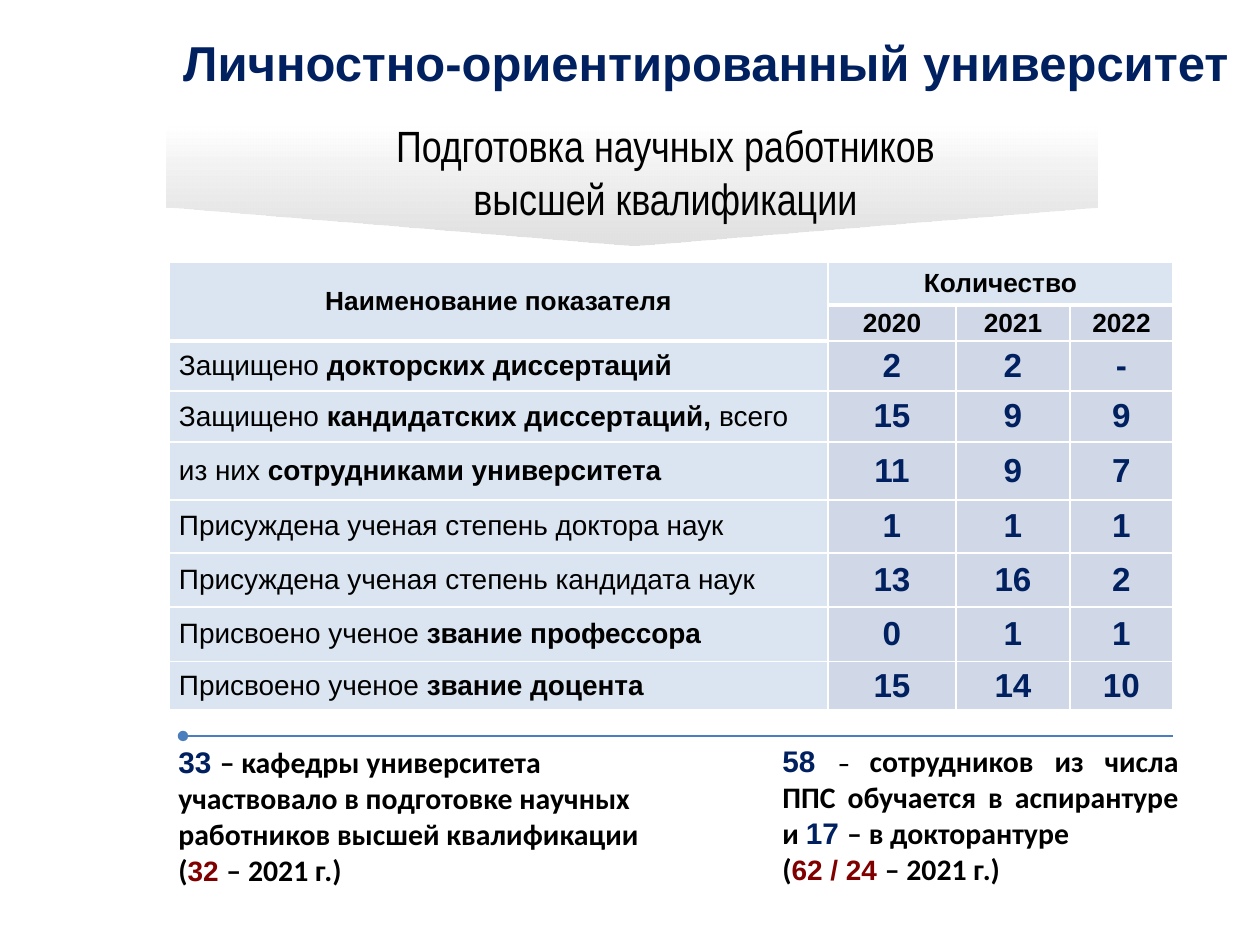
from lxml.etree import SubElement
from pptx import Presentation
from pptx.dml.color import RGBColor
from pptx.enum.shapes import MSO_CONNECTOR, MSO_SHAPE
from pptx.enum.text import MSO_ANCHOR, MSO_AUTO_SIZE, PP_ALIGN
from pptx.oxml.ns import qn
from pptx.util import Emu, Pt

PX = 914400 // 126
NAVY, BLACK, MAROON = "002060", "000000", "800000"
WHITE, ACCENT, VALUE_FILL = "FFFFFF", "4F81BD", "D0D8E8"


def px(n):
    return Emu(n * PX)


def rgb(value):
    return RGBColor.from_string(value)


def add_alpha(fill_element, percent):
    color = next(fill_element.iter(qn("a:srgbClr")))
    SubElement(color, qn("a:alpha"), val=str(percent * 1000))


def run(text, size, color=BLACK, bold=True, font="Arial"):
    return text, size, color, bold, font


class SlideBuilder:
    def __init__(self, s):
        self.s = s

    def add_runs(self, tf, paragraphs, align=PP_ALIGN.LEFT, level=0, after=0):
        for i, runs in enumerate(paragraphs):
            p = tf.paragraphs[0] if i == 0 else tf.add_paragraph()
            p.alignment = align
            p.space_after = Pt(after)
            if level:
                p.level = level
                pPr = p._p.get_or_add_pPr()
                pPr.set("marL", str(457200 * level))
                pPr.set("indent", "0")
            for text, size, color, bold, font in runs:
                r = p.add_run()
                r.text = text
                r.font.size = Pt(size)
                r.font.bold = bold
                r.font.name = font
                r.font.color.rgb = rgb(color)

    def text(self, box, paragraphs, anchor=MSO_ANCHOR.TOP, grow=True, **style):
        tf = self.s.shapes.add_textbox(*map(px, box)).text_frame
        tf.word_wrap = True
        tf.vertical_anchor = anchor
        if grow:
            tf.auto_size = MSO_AUTO_SIZE.SHAPE_TO_FIT_TEXT
        self.add_runs(tf, paragraphs, **style)

    def banner(self, box):
        sp = self.s.shapes.add_shape(MSO_SHAPE.PENTAGON, *map(px, box))
        sp.rotation = 90
        sp.adjustments[0] = 0.319
        sp.shadow.inherit = False
        sp.line.fill.background()
        sp.fill.gradient()
        sp.fill.gradient_angle = 0
        stops = sp.fill.gradient_stops
        for stop, color, position in zip(stops, (WHITE, "D9D9D9"), (0, 1)):
            stop.color.rgb = rgb(color)
            stop.position = position
        add_alpha(list(sp._element.spPr.iter(qn("a:gs")))[1], 78)

    def line(self, x1, x2, y):
        cn = self.s.shapes.add_connector(
            MSO_CONNECTOR.STRAIGHT, px(x1), px(y), px(x2), px(y))
        cn.line.color.rgb = rgb("4B7EBC")
        cn.line.width = Pt(1.25)
        spPr = cn._element.spPr
        SubElement(spPr.find(qn("a:ln")), qn("a:headEnd"), type="oval")
        SubElement(spPr, qn("a:effectLst"))

    def table(self, left, top, cols, rows):
        frame = self.s.shapes.add_table(
            len(rows), len(cols), px(left), px(top), px(sum(cols)), px(sum(rows)))
        table = frame.table
        for column, width in zip(table.columns, cols):
            column.width = px(width)
        for row, height in zip(table.rows, rows):
            row.height = px(height)
        return table

    def border(self, cell, widths):
        tcPr = cell._tc.get_or_add_tcPr()
        for side, width in zip("LRTB", widths):
            ln = SubElement(tcPr, qn(f"a:ln{side}"), w=str(int(Pt(width))))
            SubElement(SubElement(ln, qn("a:solidFill")), qn("a:srgbClr"), val=WHITE)

    def style_cell(self, cell, fill, alpha, widths):
        self.border(cell, widths)
        cell.fill.solid()
        cell.fill.fore_color.rgb = rgb(fill)
        if alpha:
            add_alpha(cell._tc.tcPr.find(qn("a:solidFill")), alpha)
        cell.vertical_anchor = MSO_ANCHOR.MIDDLE
        cell.margin_left = cell.margin_right = px(10)
        cell.margin_top = cell.margin_bottom = 0


def label(*parts):
    """Plain and bold parts of an indicator name, in turn."""
    return [run(t, 16, bold=i % 2 == 1) for i, t in enumerate(parts)]


INDICATORS = [
    (label("Защищено ", "докторских диссертаций"), "2", "2", "-"),
    (label("Защищено ", "кандидатских диссертаций, ", "всего"), "15", "9", "9"),
    (label("из них ", "сотрудниками университета"), "11", "9", "7"),
    (label("Присуждена ученая степень доктора наук"), "1", "1", "1"),
    (label("Присуждена ученая степень кандидата наук"), "13", "16", "2"),
    (label("Присвоено ученое ", "звание профессора"), "0", "1", "1"),
    (label("Присвоено ученое ", "звание доцента"), "15", "14", "10"),
]


def has_thick_bottom(row, col):
    return row == 0 or (row, col) == (1, 0)


def add_indicator_table(b):
    rows = [43, 36, 50, 51, 58, 53, 54, 55, 48]
    table = b.table(169, 262, [659, 128, 114, 103], rows)
    for i in range(len(rows)):
        for j in range(4):
            thick_top = i > 0 and has_thick_bottom(i - 1, j)
            widths = (1, 1, 3 if thick_top else 1, 3 if has_thick_bottom(i, j) else 1)
            tinted = i == 0 or j == 0
            b.style_cell(table.cell(i, j), ACCENT if tinted else VALUE_FILL,
                         20 if tinted else None, widths)

    # Header
    table.cell(0, 0).merge(table.cell(1, 0))
    table.cell(0, 1).merge(table.cell(0, 3))
    headers = {(0, 0): "Наименование показателя", (0, 1): "Количество",
               (1, 1): "2020", (1, 2): "2021", (1, 3): "2022"}
    for position, text in headers.items():
        b.add_runs(table.cell(*position).text_frame, [[run(text, 15)]],
                   PP_ALIGN.CENTER)

    # Indicators by year
    for i, (name, *values) in enumerate(INDICATORS, 2):
        b.add_runs(table.cell(i, 0).text_frame, [name])
        for j, value in enumerate(values, 1):
            b.add_runs(table.cell(i, j).text_frame, [[run(value, 19, NAVY)]],
                       PP_ALIGN.CENTER)


def note(text, size=17):
    return run(text, size, font="Calibri")


def main():
    prs = Presentation()
    prs.slide_width, prs.slide_height = px(1260), px(945)
    b = SlideBuilder(prs.slides.add_slide(prs.slide_layouts[6]))

    # Title
    b.text((166, 10, 1075, 103),
           [[run("Личностно-ориентированный университет", 28, NAVY)]],
           MSO_ANCHOR.MIDDLE, grow=False, align=PP_ALIGN.RIGHT)

    add_indicator_table(b)

    # Banner with subtitle
    b.banner((572, -280, 120, 931))
    subtitle = ["Подготовка научных работников", "высшей квалификации"]
    b.text((186, 113, 896, 118),
           [[run(t, 25, bold=False, font="Arial Narrow")] for t in subtitle],
           align=PP_ALIGN.CENTER, level=1)

    # Notes under the table
    b.text((166, 738, 504, 158), [[
        run("33 ", 17, NAVY),
        note("– кафедры университета участвовало в подготовке научных "
             "работников высшей квалификации ("),
        run("32 ", 16, MAROON), note("– 2021 г.)")]], after=9)
    b.text((770, 737, 421, 158), [
        [run("58 ", 17, NAVY), note("– ", 14),
         note("сотрудников из числа ППС обучается в аспирантуре и "),
         run("17 ", 17, NAVY), note("– в докторантуре")],
        [note("("), run("62 / 24 ", 16, MAROON), note("– 2021 г.)")],
    ], align=PP_ALIGN.JUSTIFY)

    # Divider
    b.line(183, 1173, 736)

    prs.save("out.pptx")


if __name__ == "__main__":
    main()
